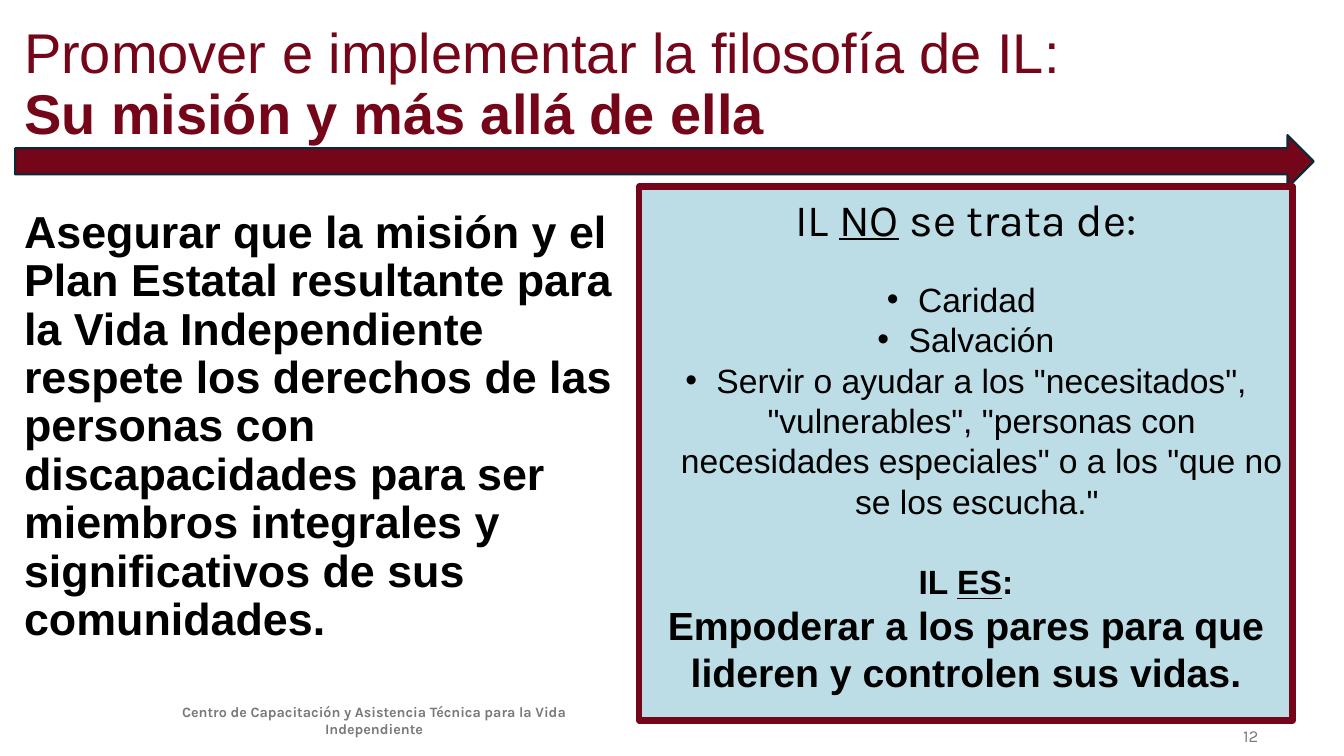
"""Build the slide on promoting the independent living philosophy."""
from lxml import etree
from pptx import Presentation
from pptx.dml.color import RGBColor
from pptx.enum.shapes import MSO_SHAPE
from pptx.enum.text import MSO_ANCHOR, PP_ALIGN
from pptx.oxml.ns import qn
from pptx.util import Pt

PX = 9144
SLIDE_SIZE = (1333, 750)
MAROON, NAVY, BLUE, BLACK, GRAY = "750518", "092A39", "BCDDE6", "000000", "797979"
INDENT = 31

ARROW = (15, 134, 1288, 52)
PANEL = (634, 185, 648, 530)

TITLE = [
    {"runs": [("Promover e implementar la filosofía de IL: \v", ""),
              ("Su misión y más allá de ella", "b")],
     "size": 40, "color": MAROON, "line": 0.9},
]
MISSION = [
    {"runs": [("Asegurar que la misión y el Plan Estatal resultante para la Vida "
               "Independiente respete los derechos de las personas con discapacidades "
               "para ser miembros integrales y significativos de sus comunidades.", "b")],
     "size": 32, "line": 0.9, "before": 10},
]
NOT_ABOUT = [
    "Caridad ",
    "Salvación",
    "Servir o ayudar a los \"necesitados\", \"vulnerables\", \"personas con necesidades "
    "especiales\" o a los \"que no se los escucha.\" ",
]
PHILOSOPHY = [
    {"runs": [("IL ", ""), ("NO", "u"), (" se trata de:", "")],
     "size": 32, "font": "Karla", "align": PP_ALIGN.CENTER, "after": 24},
    *[{"runs": [(item, "")], "size": 24, "align": PP_ALIGN.CENTER, "bullet": "•"}
      for item in NOT_ABOUT],
    {"runs": [("IL ", "b"), ("ES", "bu"), (":", "b")],
     "size": 24, "align": PP_ALIGN.CENTER, "before": 29},
    {"runs": [("Empoderar a los pares para que lideren y controlen sus vidas.", "b")],
     "size": 28, "align": PP_ALIGN.CENTER},
]
FOOTER = [
    {"runs": [("Centro de Capacitación y Asistencia Técnica para la Vida Independiente", "b")],
     "size": 10.2, "font": "Karla", "color": GRAY, "align": PP_ALIGN.CENTER, "after": 6},
]
NUMBER = [
    {"runs": [("12", "")], "size": 12, "font": "Karla", "color": GRAY,
     "align": PP_ALIGN.RIGHT, "after": 6},
]
TEXT_BLOCKS = [
    (NUMBER, (958, 710, 300, 40), MSO_ANCHOR.MIDDLE),
    (TITLE, (14, 2, 1319, 148), MSO_ANCHOR.BOTTOM),
    (MISSION, (14, 203, 608, 390), MSO_ANCHOR.TOP),
    (FOOTER, (146, 695, 450, 40), MSO_ANCHOR.MIDDLE),
]


def rgb(color):
    return RGBColor.from_string(color)


def emu(box):
    return [length * PX for length in box]


def add_bullet(paragraph, mark):
    properties = paragraph._p.get_or_add_pPr()
    properties.set("marL", str(INDENT * PX))
    properties.set("indent", str(-INDENT * PX))
    etree.SubElement(properties, qn("a:buFont"), typeface="Arial")
    etree.SubElement(properties, qn("a:buChar"), char=mark)


def write(frame, content, anchor):
    frame.word_wrap = True
    frame.vertical_anchor = anchor
    for index, entry in enumerate(content):
        paragraph = frame.paragraphs[0] if index == 0 else frame.add_paragraph()
        paragraph.alignment = entry.get("align", PP_ALIGN.LEFT)
        paragraph.line_spacing = entry.get("line", 1.0)
        paragraph.space_before = Pt(entry.get("before", 0))
        paragraph.space_after = Pt(entry.get("after", 0))
        if "bullet" in entry:
            add_bullet(paragraph, entry["bullet"])
        for text, style in entry["runs"]:
            run = paragraph.add_run()
            run.text = text.rstrip("\v")
            run.font.name = entry.get("font", "Arial")
            run.font.size = Pt(entry["size"])
            run.font.bold = "b" in style
            run.font.underline = "u" in style
            run.font.color.rgb = rgb(entry.get("color", BLACK))
            if text.endswith("\v"):
                paragraph.add_line_break()


def add_block(slide, kind, box, fill, line, width):
    block = slide.shapes.add_shape(kind, *emu(box))
    block.shadow.inherit = False
    block.fill.solid()
    block.fill.fore_color.rgb = rgb(fill)
    block.line.color.rgb = rgb(line)
    block.line.width = Pt(width)
    return block


def main():
    deck = Presentation()
    deck.slide_width, deck.slide_height = emu(SLIDE_SIZE)
    slide = deck.slides.add_slide(deck.slide_layouts[6])
    add_block(slide, MSO_SHAPE.RIGHT_ARROW, ARROW, MAROON, NAVY, 1.5)
    panel = add_block(slide, MSO_SHAPE.RECTANGLE, PANEL, BLUE, MAROON, 4.5)
    write(panel.text_frame, PHILOSOPHY, MSO_ANCHOR.TOP)
    for content, box, anchor in TEXT_BLOCKS:
        block = slide.shapes.add_textbox(*emu(box))
        write(block.text_frame, content, anchor)
    deck.save("out.pptx")


if __name__ == "__main__":
    main()
